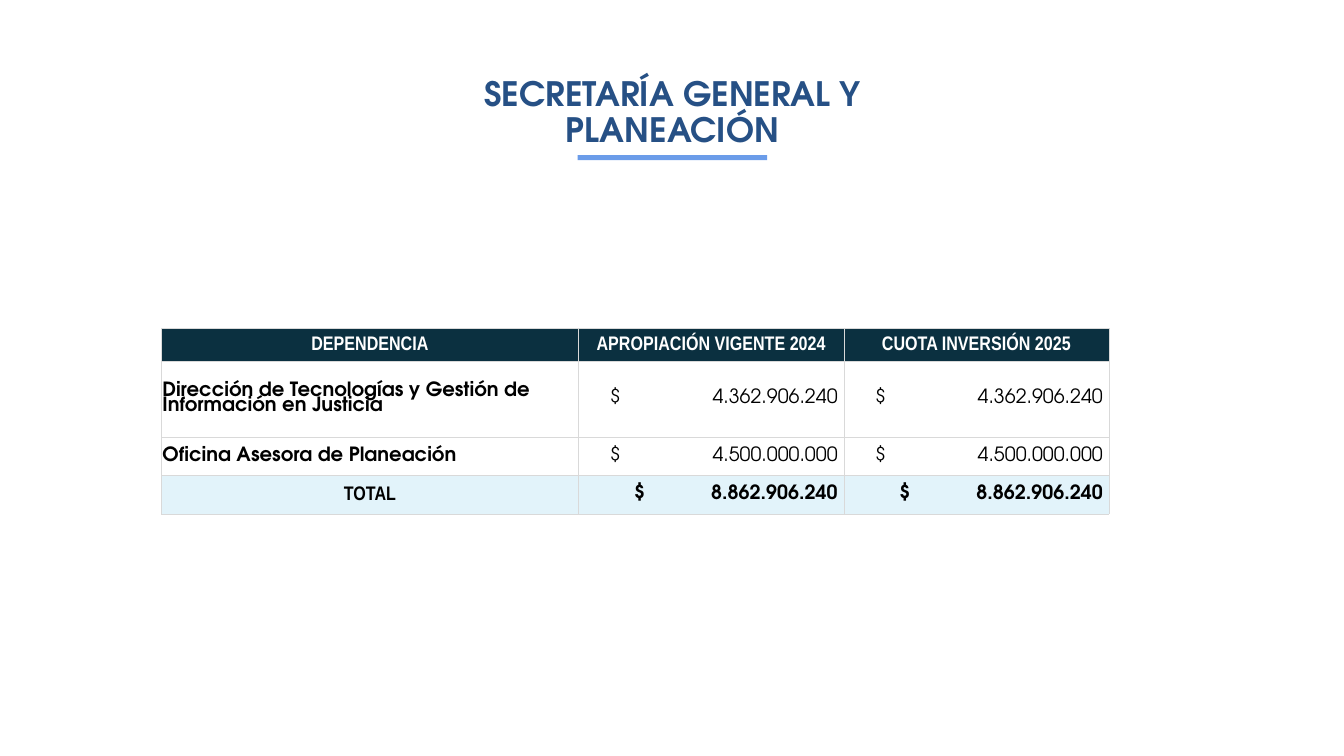
from dataclasses import dataclass

from lxml.etree import SubElement
from pptx import Presentation
from pptx.dml.color import RGBColor
from pptx.enum.shapes import MSO_SHAPE
from pptx.enum.text import MSO_ANCHOR, MSO_AUTO_SIZE, PP_ALIGN
from pptx.oxml.ns import qn
from pptx.util import Inches, Pt


@dataclass(frozen=True)
class Theme:
    title: str = "265085"
    bar: str = "6B9CE9"
    head: str = "0B3040"
    total: str = "E2F3FA"
    rule: str = "D9D9D9"
    light: str = "FFFFFF"
    dark: str = "000000"
    main: str = "TeX Gyre Adventor"
    slim: str = "Arial Narrow"
    big: int = 24
    small: int = 14


class Deck:
    def __init__(self, theme):
        self.theme = theme
        self.show = Presentation()
        self.show.slide_width = Inches(13.33)
        self.show.slide_height = Inches(7.5)
        self.slide = self.show.slides.add_slide(self.show.slide_layouts[5])

    def style(self, para, face, size, color, bold, align):
        para.alignment = align
        font = para.font
        font.name, font.size, font.bold = face, Pt(size), bold
        font.color.rgb = RGBColor.from_string(color)

    def title(self, text, box):
        shape = self.slide.shapes.title
        shape.left, shape.top, shape.width, shape.height = map(Inches, box)
        frame = shape.text_frame
        frame.text = text
        frame.word_wrap = True
        frame.auto_size = MSO_AUTO_SIZE.NONE
        frame.vertical_anchor = MSO_ANCHOR.BOTTOM
        para = frame.paragraphs[0]
        para.line_spacing = 0.9
        self.style(para, self.theme.main, self.theme.big, self.theme.title,
                   True, PP_ALIGN.CENTER)

    def bar(self, box):
        shape = self.slide.shapes.add_shape(MSO_SHAPE.RECTANGLE, *map(Inches, box))
        shape.shadow.inherit = False
        shape.fill.solid()
        shape.fill.fore_color.rgb = RGBColor.from_string(self.theme.bar)
        shape.line.fill.background()

    def border(self, cell):
        props = cell._tc.get_or_add_tcPr()
        for side in ("a:lnL", "a:lnR", "a:lnT", "a:lnB"):
            line = SubElement(props, qn(side), w=str(Pt(0.5)))
            fill = SubElement(line, qn("a:solidFill"))
            SubElement(fill, qn("a:srgbClr"), val=self.theme.rule)

    def cell(self, cell, text, fill, face, color, bold, align, indent=0.01):
        cell.text = text
        cell.vertical_anchor = MSO_ANCHOR.MIDDLE
        cell.margin_left = Inches(indent)
        cell.margin_right = cell.margin_top = Inches(0.01)
        cell.margin_bottom = 0
        self.border(cell)
        if fill:
            cell.fill.solid()
            cell.fill.fore_color.rgb = RGBColor.from_string(fill)
        else:
            cell.fill.background()
        para = cell.text_frame.paragraphs[0]
        if "\t" in text:
            # Right tab that lines up the amounts
            tabs = SubElement(para._p.get_or_add_pPr(), qn("a:tabLst"))
            SubElement(tabs, qn("a:tab"), pos=str(Inches(2.57 - indent)), algn="r")
        if face == self.theme.main:
            para.line_spacing = 0.8
        self.style(para, face, self.theme.small, color, bold, align)

    def table(self, rows, spot, widths, heights):
        look = self.theme
        frame = self.slide.shapes.add_table(
            len(rows), len(widths), *map(Inches, spot),
            Inches(sum(widths)), Inches(sum(heights)))
        grid = frame.table
        for col, width in zip(grid.columns, widths):
            col.width = Inches(width)
        for row, height in zip(grid.rows, heights):
            row.height = Inches(height)
        last = len(rows) - 1
        for i, row in enumerate(rows):
            fill = {0: look.head, last: look.total}.get(i)
            for j, text in enumerate(row):
                cell = grid.cell(i, j)
                if i == 0:
                    self.cell(cell, text, fill, look.slim, look.light, True,
                              PP_ALIGN.CENTER)
                elif j:
                    self.cell(cell, "$\t" + text, fill, look.main, look.dark,
                              i == last, PP_ALIGN.LEFT,
                              0.55 if i == last else 0.31)
                elif i == last:
                    self.cell(cell, text, fill, look.slim, look.dark, True,
                              PP_ALIGN.CENTER)
                else:
                    self.cell(cell, text, fill, look.main, look.dark, True,
                              PP_ALIGN.LEFT)


def main():
    deck = Deck(Theme())

    # Title and its underline
    deck.title("SECRETARÍA GENERAL Y PLANEACIÓN", (3.64, 0.67, 6.06, 0.87))
    deck.bar((5.73, 1.54, 1.88, 0.05))

    # Budget by office
    rows = [
        ("DEPENDENCIA", "APROPIACIÓN VIGENTE 2024", "CUOTA INVERSIÓN 2025"),
        ("Dirección de Tecnologías y Gestión de Información en Justicia",
         "4.362.906.240", "4.362.906.240"),
        ("Oficina Asesora de Planeación", "4.500.000.000", "4.500.000.000"),
        ("TOTAL", "8.862.906.240", "8.862.906.240"),
    ]
    deck.table(rows, (1.6, 3.26), (4.14, 2.63, 2.63), (0.32, 0.76, 0.38, 0.38))

    deck.show.save("out.pptx")


if __name__ == "__main__":
    main()
